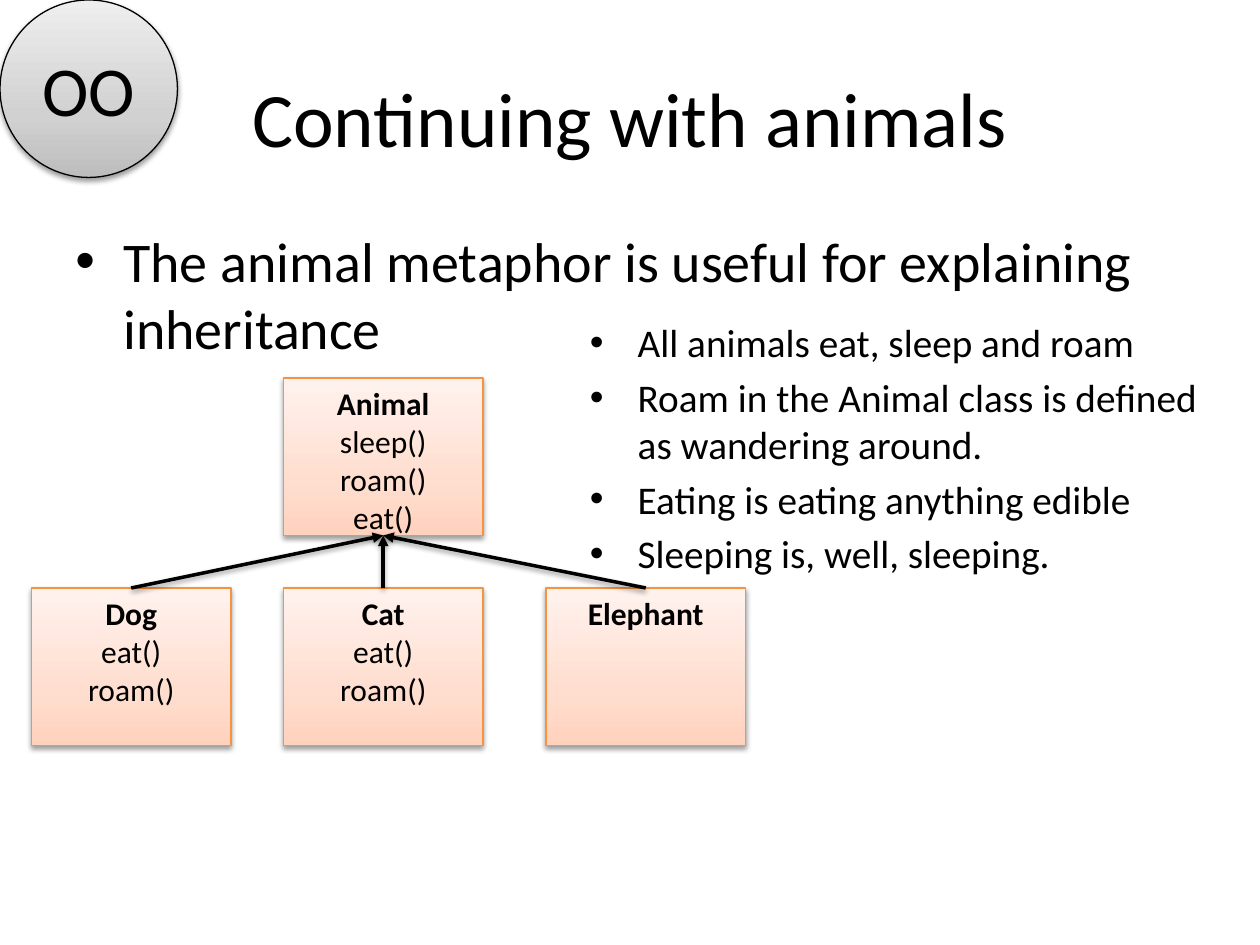
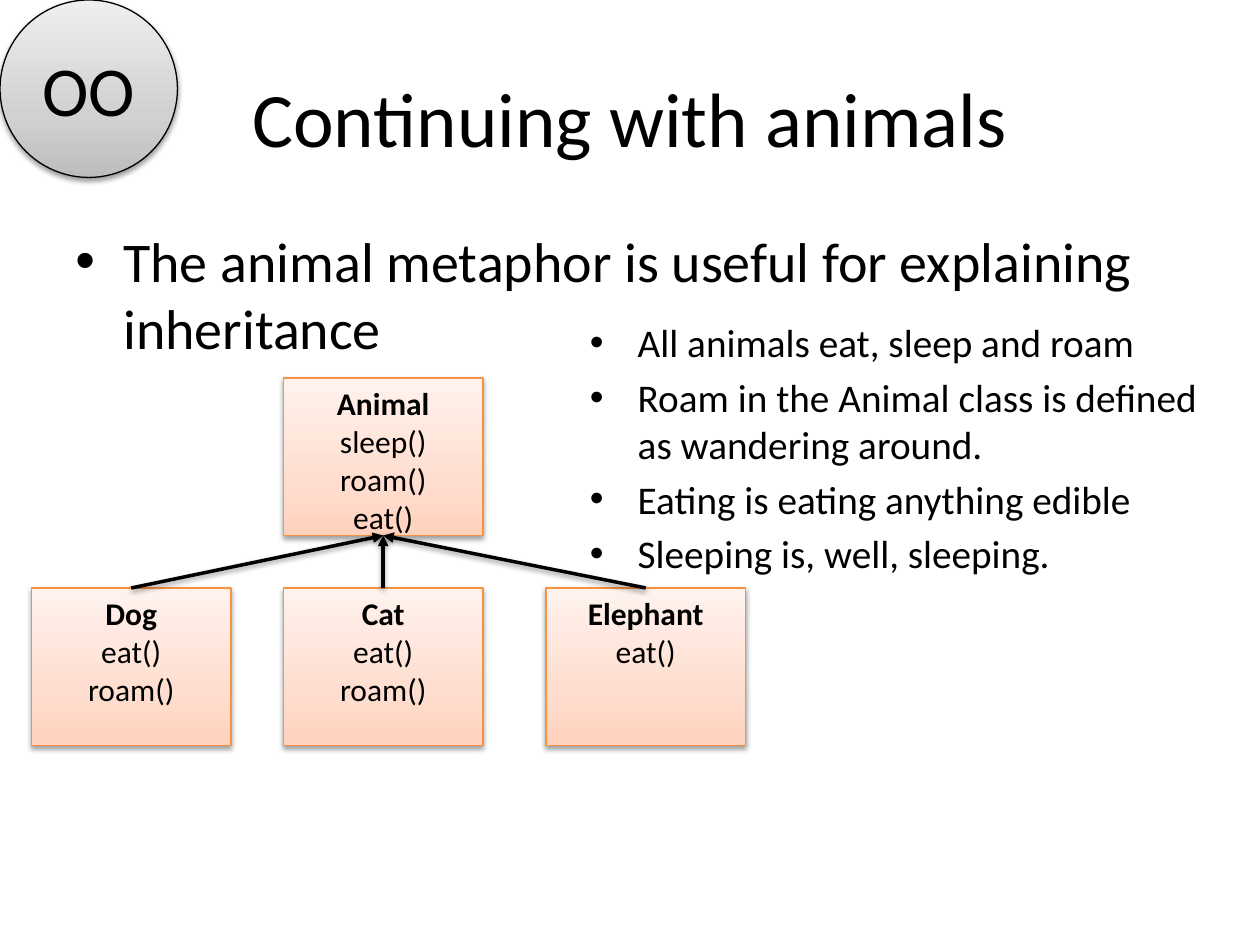
from copy import deepcopy

from lxml.etree import SubElement
from pptx import Presentation
from pptx.dml.color import RGBColor
from pptx.enum.shapes import MSO_CONNECTOR, MSO_SHAPE
from pptx.enum.text import MSO_ANCHOR, PP_ALIGN
from pptx.oxml.ns import qn
from pptx.util import Inches, Pt

BLACK = RGBColor(0x00, 0x00, 0x00)
ORANGE = RGBColor(0xF6, 0x92, 0x40)
PEACH_GRADIENT = (RGBColor(0xFF, 0xD2, 0xBD), RGBColor(0xFF, 0xDE, 0xD0), RGBColor(0xFF, 0xF2, 0xED))
GREY_GRADIENT = (RGBColor(0xBD, 0xBD, 0xBD), RGBColor(0xD1, 0xD1, 0xD1), RGBColor(0xEE, 0xEE, 0xEE))
GRADIENT_POSITIONS = (0, 0.35, 1)

# The grid has 120 columns and 90 rows, each a twelfth of an inch
COLUMNS, ROWS = 120, 90
CELL = Inches(1) // 12
BOX_WIDTH, BOX_HEIGHT = 19, 15
PARENT_ROW, CHILD_ROW = 36, 56
DOG_COLUMN, CAT_COLUMN, ELEPHANT_COLUMN = 3, 27, 52

BEHAVIOURS = (
    "All animals eat, sleep and roam",
    "Roam in the Animal class is defined as wandering around.",
    "Eating is eating anything edible",
    "Sleeping is, well, sleeping.",
)


def add_text(text_frame, text, first=False, size=18, bold=False,
             align=PP_ALIGN.LEFT, bullet=False, line_spacing=None):
    """Write one paragraph of text with the given format."""
    paragraph = text_frame.paragraphs[0] if first else text_frame.add_paragraph()
    paragraph.alignment = align
    run = paragraph.add_run()
    run.text = text
    run.font.name = "Calibri"
    run.font.size = Pt(size)
    run.font.bold = bold
    run.font.color.rgb = BLACK
    if bullet:
        properties = paragraph._p.get_or_add_pPr()
        properties.set("marL", str(Inches(0.38)))
        properties.set("indent", str(-Inches(0.38)))
        spacing = SubElement(properties, qn("a:spcBef"))
        SubElement(spacing, qn("a:spcPct"), val="20000")
        SubElement(properties, qn("a:buFont"), typeface="Arial")
        SubElement(properties, qn("a:buChar"), char="•")
    if line_spacing:
        paragraph.line_spacing = line_spacing


def add_shadow(shape):
    """Give a shape or connector the soft shadow below it."""
    effects = SubElement(shape.element.spPr, qn("a:effectLst"))
    shadow = SubElement(effects, qn("a:outerShdw"), blurRad=str(Pt(3.1)), dist=str(Pt(1.6)),
                        dir="5400000", rotWithShape="0")
    color = SubElement(shadow, qn("a:srgbClr"), val=str(BLACK))
    SubElement(color, qn("a:alpha"), val="38000")


class SlideBuilder:
    """Holds the shared style and the slide being built."""

    def __init__(self, presentation):
        self.presentation = presentation
        self.slide = None

    def new_slide(self):
        self.slide = self.presentation.slides.add_slide(self.presentation.slide_layouts[6])

    def place(self, *cells):
        return [round(cell * CELL) for cell in cells]

    def text_box(self, column, row, width, height, anchor=MSO_ANCHOR.TOP):
        shape = self.slide.shapes.add_textbox(*self.place(column, row, width, height))
        shape.text_frame.word_wrap = True
        shape.text_frame.vertical_anchor = anchor
        return shape.text_frame

    def title(self, text):
        frame = self.text_box(6, 3.6, 108, 15, MSO_ANCHOR.MIDDLE)
        add_text(frame, text, first=True, size=44, align=PP_ALIGN.CENTER)

    def bullets(self, texts, column, row, width, height, size, first_spacing=None):
        frame = self.text_box(column, row, width, height)
        for index, text in enumerate(texts):
            add_text(frame, text, first=index == 0, size=size, bullet=True,
                     line_spacing=first_spacing if index == 0 else None)

    def gradient_shape(self, kind, column, row, width, height, gradient, line_color, anchor):
        shape = self.slide.shapes.add_shape(kind, *self.place(column, row, width, height))
        shape.fill.gradient()
        shape.fill.gradient_angle = 90
        stops = shape.element.spPr.find(".//" + qn("a:gsLst"))
        stops.insert(1, deepcopy(stops[0]))
        for stop, position, color in zip(shape.fill.gradient_stops, GRADIENT_POSITIONS, gradient):
            stop.position = position
            stop.color.rgb = color
        shape.line.color.rgb = line_color
        shape.line.width = Pt(0.75)
        add_shadow(shape)
        shape.text_frame.word_wrap = True
        shape.text_frame.vertical_anchor = anchor
        return shape

    def class_box(self, name, methods, column, row):
        shape = self.gradient_shape(MSO_SHAPE.RECTANGLE, column, row, BOX_WIDTH, BOX_HEIGHT,
                                    PEACH_GRADIENT, ORANGE, MSO_ANCHOR.TOP)
        add_text(shape.text_frame, name, first=True, bold=True, align=PP_ALIGN.CENTER)
        for method in methods:
            add_text(shape.text_frame, method, align=PP_ALIGN.CENTER)
        return shape

    def inheritance_arrow(self, child, parent):
        connector = self.slide.shapes.add_connector(MSO_CONNECTOR.STRAIGHT, 0, 0, 0, 0)
        connector.begin_connect(child, 0)
        connector.end_connect(parent, 2)
        connector.line.color.rgb = BLACK
        connector.line.width = Pt(2)
        SubElement(connector.line._get_or_add_ln(), qn("a:tailEnd"), type="triangle")
        add_shadow(connector)

    def badge(self, text):
        shape = self.gradient_shape(MSO_SHAPE.OVAL, 0, 0, 16.9, 16.9,
                                    GREY_GRADIENT, BLACK, MSO_ANCHOR.MIDDLE)
        add_text(shape.text_frame, text, first=True, size=40, align=PP_ALIGN.CENTER)

    def animal_slide(self, elephant_methods):
        self.new_slide()
        self.title("Continuing with animals")
        self.bullets(["The animal metaphor is useful for explaining inheritance"],
                     6, 21, 108, 59.4, size=32)

        # Class diagram
        animal = self.class_box("Animal", ["sleep()", "roam()", "eat()"], CAT_COLUMN, PARENT_ROW)
        children = (
            ("Dog", ["eat()", "roam()"], DOG_COLUMN),
            ("Cat", ["eat()", "roam()"], CAT_COLUMN),
            ("Elephant", elephant_methods, ELEPHANT_COLUMN),
        )
        for name, methods, column in children:
            child = self.class_box(name, methods, column, CHILD_ROW)
            self.inheritance_arrow(child, animal)

        # Explanation and corner badge
        self.bullets(BEHAVIOURS, 55, 30.6, 61, 23.4, size=22.4, first_spacing=0.8)
        self.badge("OO")


def main():
    presentation = Presentation()
    presentation.slide_width = COLUMNS * CELL
    presentation.slide_height = ROWS * CELL
    builder = SlideBuilder(presentation)
    for elephant_methods in ([], ["eat()"]):
        builder.animal_slide(elephant_methods)
    presentation.save("out.pptx")


if __name__ == "__main__":
    main()
